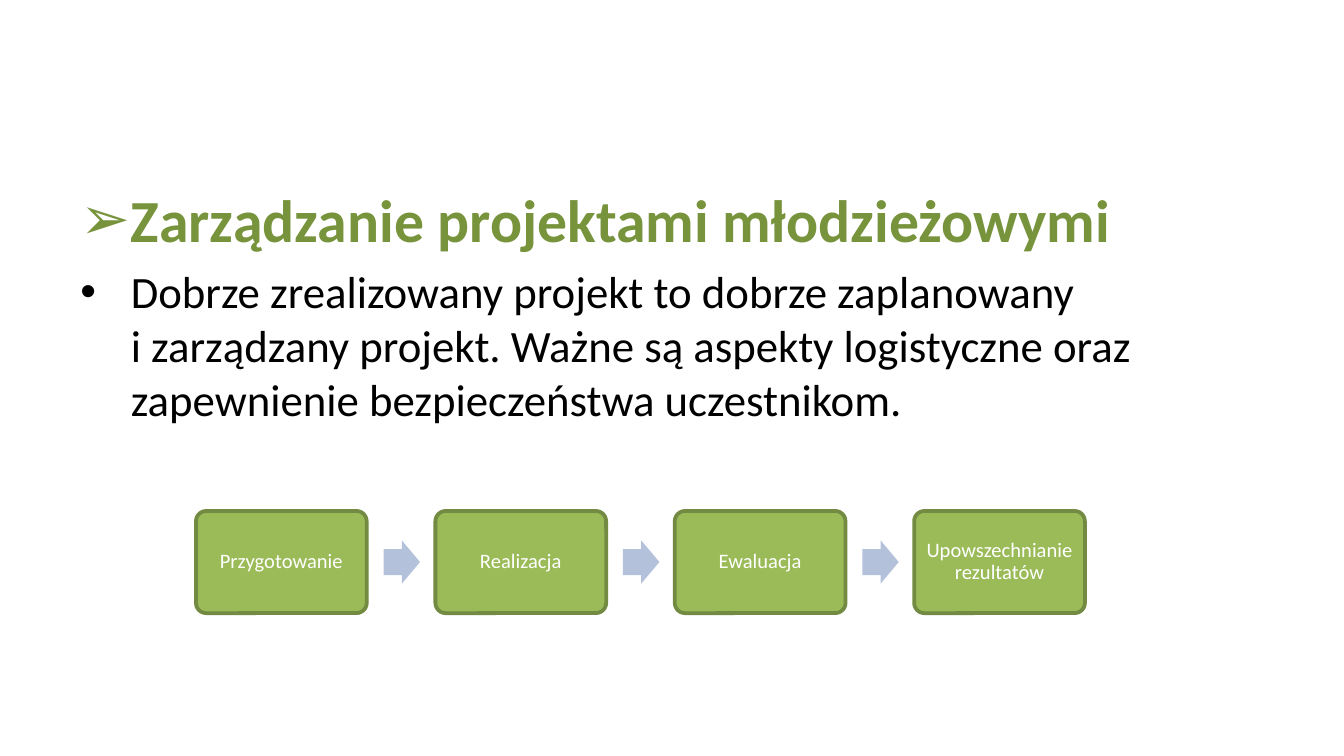
from lxml import etree
from pptx import Presentation
from pptx.dml.color import RGBColor
from pptx.enum.shapes import MSO_SHAPE
from pptx.enum.text import MSO_ANCHOR, PP_ALIGN
from pptx.oxml.ns import qn
from pptx.util import Emu, Pt

ROUND_RECT = MSO_SHAPE.ROUNDED_RECTANGLE
RIGHT_ARROW = MSO_SHAPE.RIGHT_ARROW
MIDDLE = MSO_ANCHOR.MIDDLE
LEFT, CENTER = PP_ALIGN.LEFT, PP_ALIGN.CENTER

FONT = "Calibri"
STEPS = ["Przygotowanie", "Realizacja", "Ewaluacja", "Upowszechnianie rezultatów"]


def px(n):
    """96 px to the inch."""
    return Emu(n * 9525)


def rgb(hex_color):
    return RGBColor.from_string(hex_color)


def add_bullet(p, char, indent):
    pPr = p._p.get_or_add_pPr()
    pPr.set("marL", str(px(indent)))
    pPr.set("indent", str(px(-indent)))
    etree.SubElement(pPr, qn("a:buFont")).set("typeface", "Arial")
    etree.SubElement(pPr, qn("a:buChar")).set("char", char)


def write(p, text, size, color, bold=False, align=LEFT, bullet=None, before=0, spacing=1.0):
    if bullet:
        add_bullet(p, bullet, 36)
    p.text = text
    p.alignment = align
    p.space_before = Pt(before)
    p.line_spacing = spacing
    for r in p.runs:
        r.font.name = FONT
        r.font.size = Pt(size)
        r.font.bold = bold
        r.font.color.rgb = rgb(color)


def add_shape(slide, kind, x, y, w, h, fill, line=None, adjustments=()):
    sp = slide.shapes.add_shape(kind, px(x), px(y), px(w), px(h))
    sp.shadow.inherit = False
    for i, value in enumerate(adjustments):
        sp.adjustments[i] = value
    sp.fill.solid()
    sp.fill.fore_color.rgb = rgb(fill)
    if line:
        sp.line.color.rgb = rgb(line)
        sp.line.width = Pt(2)
    else:
        sp.line.fill.background()
    return sp


def add_body(slide, x, y, w, h):
    tf = slide.shapes.add_textbox(px(x), px(y), px(w), px(h)).text_frame
    tf.word_wrap = True
    write(tf.paragraphs[0], "Zarządzanie projektami młodzieżowymi", 32, "77933C",
          bold=True, bullet="➢")
    write(tf.add_paragraph(),
          "Dobrze zrealizowany projekt to dobrze zaplanowany\n"
          "i zarządzany projekt. Ważne są aspekty logistyczne oraz "
          "zapewnienie bezpieczeństwa uczestnikom.",
          24, "000000", bullet="•", before=5)


def add_process(slide, x, y, w, h, steps):
    """Row of step boxes with an arrow in each gap."""
    box_w, arrow_w, arrow_h = 122, 26, 31
    pitch = (w - box_w) // (len(steps) - 1)
    for i, step in enumerate(steps):
        left = x + i * pitch
        sp = add_shape(slide, ROUND_RECT, left, y, box_w, h, "9BBB59", "738A42", [0.1])
        tf = sp.text_frame
        tf.word_wrap = True
        tf.vertical_anchor = MIDDLE
        tf.margin_left = tf.margin_right = tf.margin_top = tf.margin_bottom = px(5)
        write(tf.paragraphs[0], step, 11, "FFFFFF", align=CENTER, spacing=0.9)
        if i < len(steps) - 1:
            add_shape(slide, RIGHT_ARROW, left + box_w + 12, y + (h - arrow_h) // 2,
                      arrow_w, arrow_h, "B3C1DB", adjustments=[0.6, 0.5])


def main():
    prs = Presentation()
    prs.slide_width, prs.slide_height = px(960), px(540)
    slide = prs.slides.add_slide(prs.slide_layouts[6])
    add_body(slide, 48, 126, 864, 197)
    add_process(slide, 140, 365, 635, 73, STEPS)
    prs.save("out.pptx")


if __name__ == "__main__":
    main()
